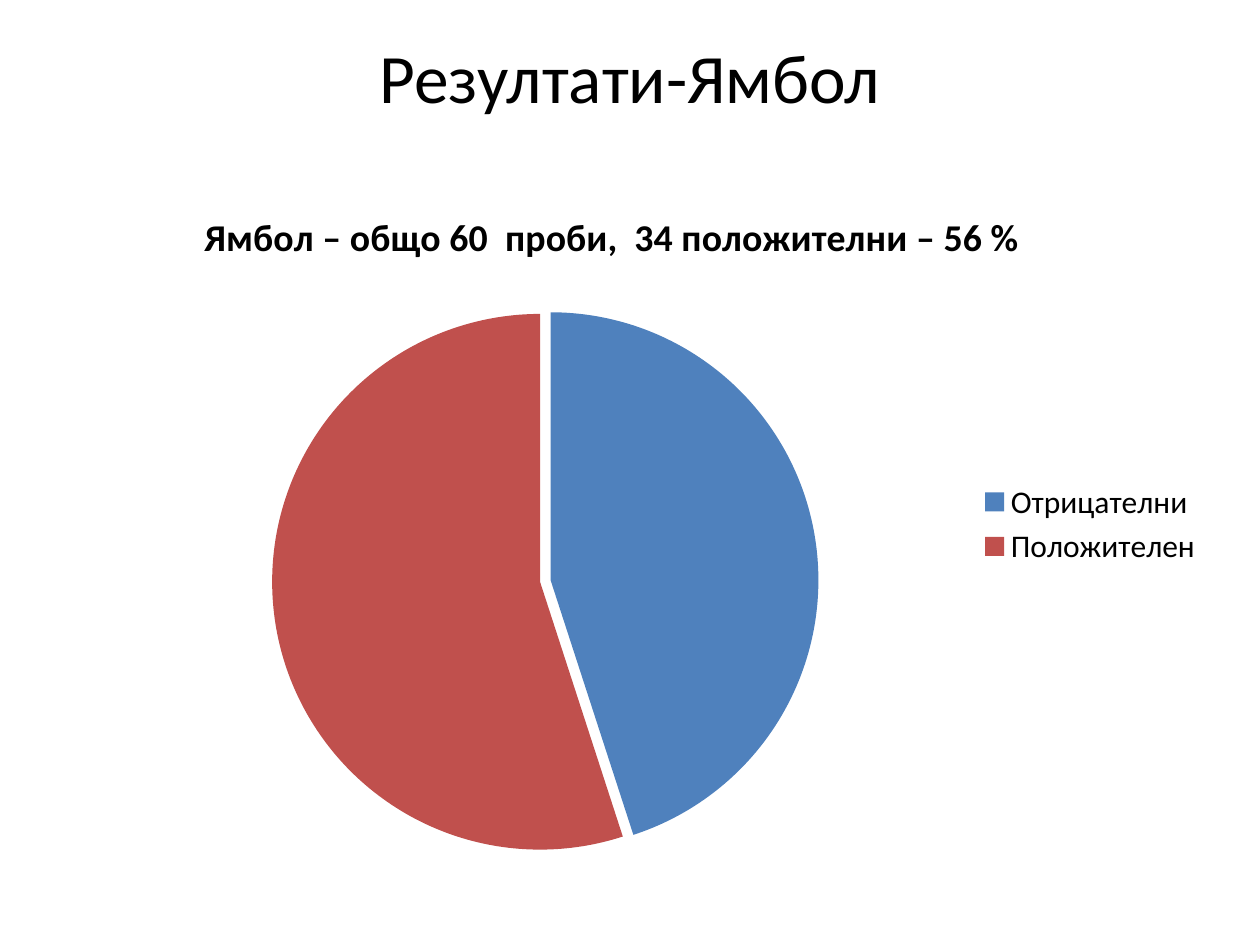
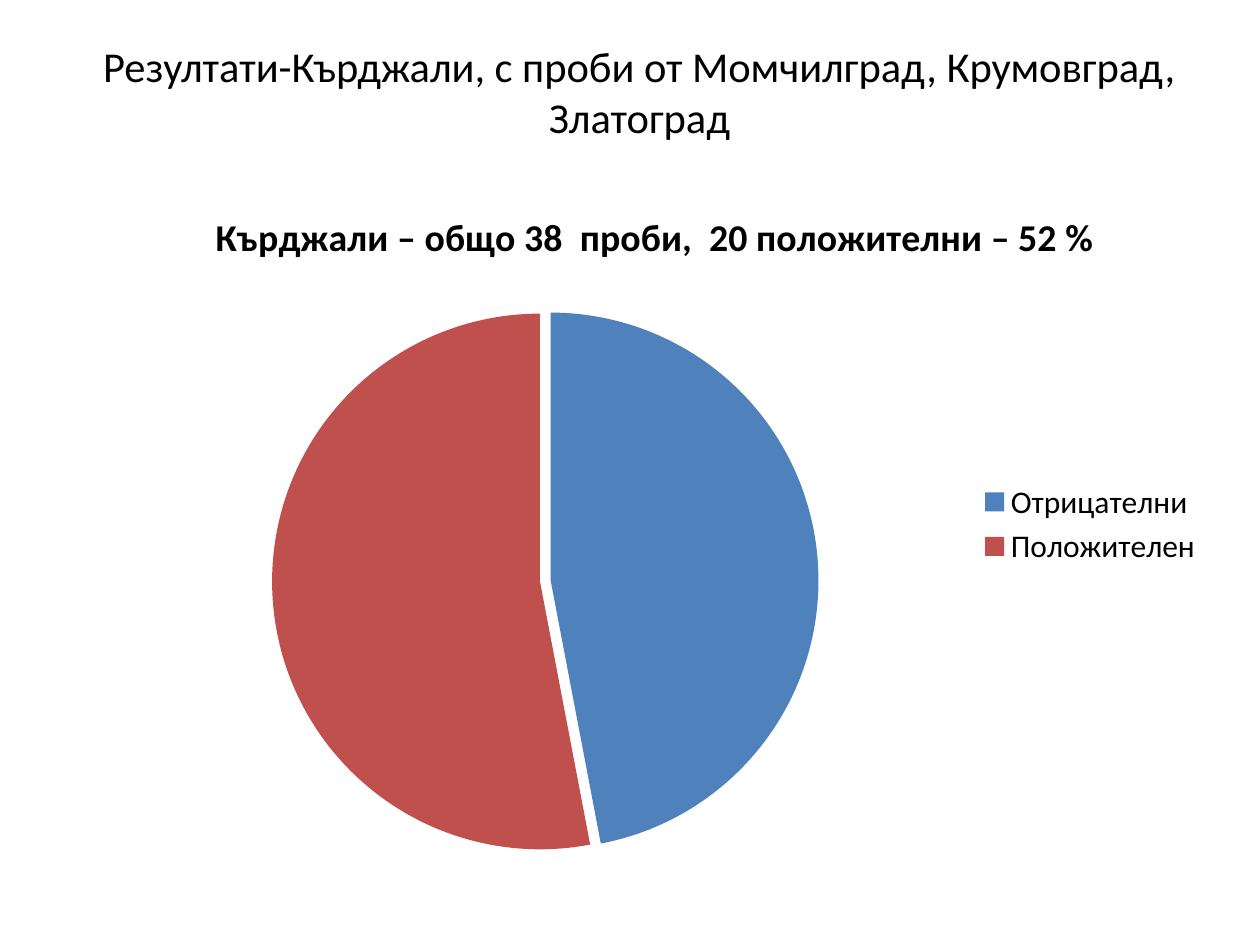
"""Build two slides with pie charts of test results by town."""
from lxml import etree
from pptx import Presentation
from pptx import util as u
from pptx.chart import data
from pptx.dml import color
from pptx.enum import chart as charts, text
from pptx.oxml import ns

FONT = "Calibri"
BLACK = "000000"
SLICE_COLORS = ["4F81BD", "C0504D"]
CATEGORIES = ["Отрицателни", "Положителен"]
PLOT_LAYOUT = {"layoutTarget": "inner", "xMode": "edge", "yMode": "edge",
               "x": 0.166, "y": 0.19, "w": 0.483, "h": 0.783}

PAGES = [
    {"title": "Резултати-Ямбол", "size": 39.6, "place": (36, 21.6, 648, 43.9),
     "caption": "Ямбол – общо 60  проби,  34 положителни – 56 %",
     "caption_x": 0.1, "values": [45, 55]},
    {"title": "Резултати-Кърджали, с проби от Момчилград, Крумовград, Златоград",
     "size": 24.3, "place": (36.7, 20.9, 657.4, 62.6),
     "caption": "Кърджали – общо 38  проби,  20 положителни – 52 %",
     "caption_x": 0.11, "values": [47, 53]},
]


def rgb(value):
    return color.RGBColor.from_string(value)


def write(frame, wording, size, bold=False, fill=BLACK):
    para = frame.paragraphs[0]
    para.alignment = text.PP_ALIGN.CENTER
    span = para.add_run()
    span.text = wording
    span.font.name = FONT
    span.font.size = u.Pt(size)
    span.font.bold = bold
    span.font.color.rgb = rgb(fill)


deck = Presentation()
deck.slide_width, deck.slide_height = u.Pt(720), u.Pt(540)

for entry in PAGES:
    page = deck.slides.add_slide(deck.slide_layouts[6])
    page.background.fill.solid()
    page.background.fill.fore_color.rgb = rgb("FFFFFF")

    box = page.shapes.add_textbox(*[u.Pt(length) for length in entry["place"]])
    box.text_frame.word_wrap = True
    box.text_frame.vertical_anchor = text.MSO_ANCHOR.MIDDLE
    write(box.text_frame, entry["title"], entry["size"])

    results = data.CategoryChartData()
    results.categories = CATEGORIES
    results.add_series("Series 1", entry["values"])
    pie = page.shapes.add_chart(
        charts.XL_CHART_TYPE.PIE, u.Pt(48.2), u.Pt(100.1), u.Pt(646.6), u.Pt(398.9), results
    ).chart
    pie.font.name = FONT
    pie.font.size = u.Pt(18)
    pie.font.color.rgb = rgb(BLACK)
    pie.has_legend = True
    pie.legend.position = charts.XL_LEGEND_POSITION.RIGHT
    pie.legend.include_in_layout = False
    pie.has_title = True
    write(pie.chart_title.text_frame, entry["caption"], 21.6, bold=True)

    plot = pie.plots[0]
    plot.vary_by_categories = True
    series = plot.series[0]
    explosion = etree.Element(ns.qn("c:explosion"), val="2")
    series._element.find(ns.qn("c:tx")).addnext(explosion)
    for index, slice_color in enumerate(SLICE_COLORS):
        slice_format = series.points[index].format
        slice_format.fill.solid()
        slice_format.fill.fore_color.rgb = rgb(slice_color)
        slice_format.line.fill.background()

    caption_layout = {"xMode": "edge", "yMode": "edge", "x": entry["caption_x"], "y": 0.04}
    plot_area = pie._chartSpace.chart.plotArea
    for parent, position, settings in [(plot_area, 0, PLOT_LAYOUT),
                                       (pie.chart_title._element, 1, caption_layout)]:
        for previous in parent.findall(ns.qn("c:layout")):
            parent.remove(previous)
        layout = etree.Element(ns.qn("c:layout"))
        manual = etree.SubElement(layout, ns.qn("c:manualLayout"))
        for name, value in settings.items():
            etree.SubElement(manual, ns.qn(f"c:{name}"), val=str(value))
        parent.insert(position, layout)

deck.save("out.pptx")
